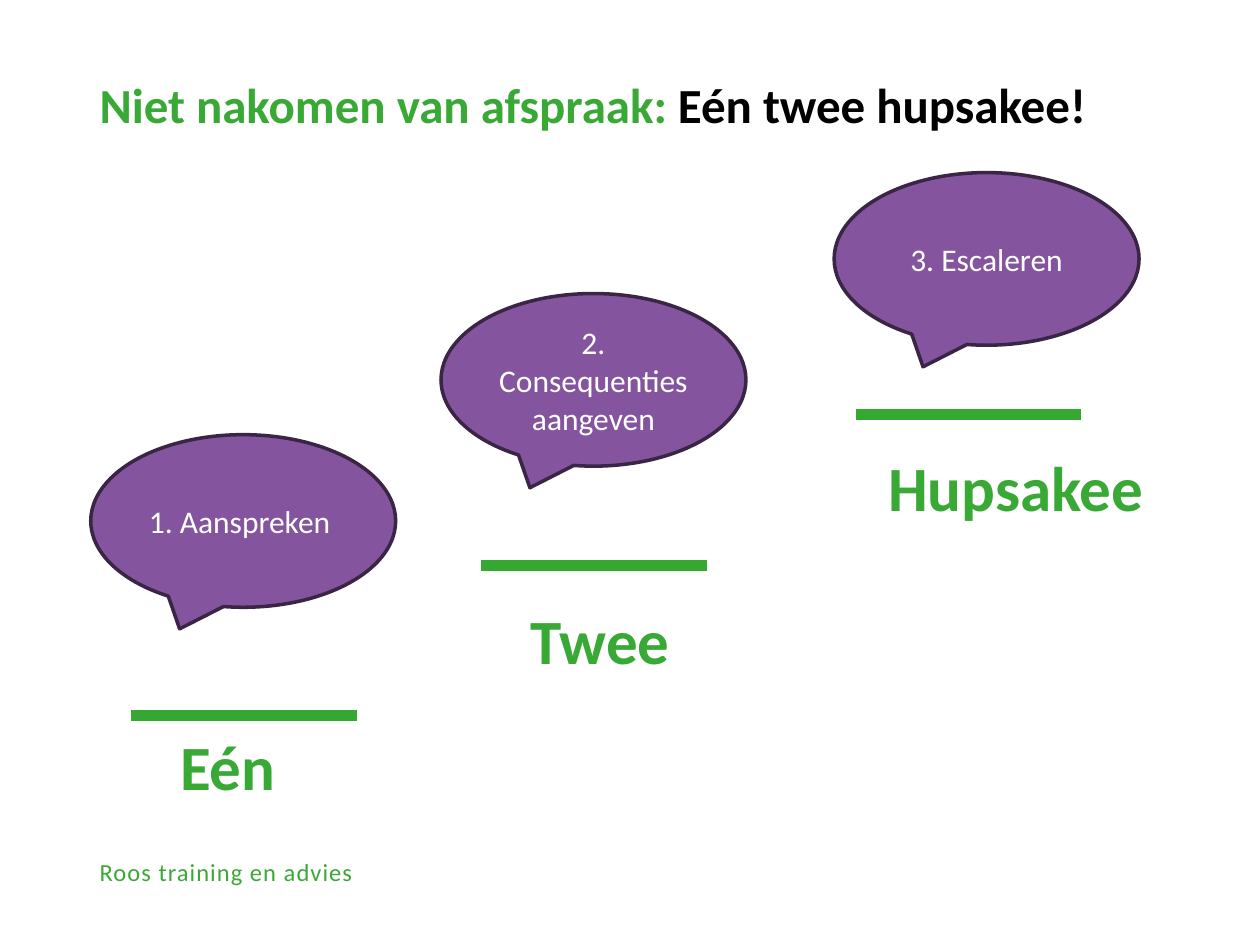
from pptx import Presentation
from pptx.dml.color import RGBColor
from pptx.enum.shapes import MSO_CONNECTOR as Connector, MSO_SHAPE as Shape
from pptx.enum.text import MSO_ANCHOR as Anchor, MSO_AUTO_SIZE as AutoSize, PP_ALIGN as Align
from pptx.oxml.ns import qn
from pptx.util import Inches, Pt
from lxml.etree import SubElement

GREEN = RGBColor(0x39, 0xA9, 0x35)
STEP_GREEN = RGBColor(0x35, 0xA8, 0x31)
PURPLE = RGBColor(0x84, 0x55, 0x9E)
DARK_PURPLE = RGBColor(0x3A, 0x25, 0x45)
BLACK = RGBColor(0, 0, 0)
WHITE = RGBColor(0xFF, 0xFF, 0xFF)

NO_MARGINS = dict.fromkeys(("margin_left", "margin_top", "margin_right", "margin_bottom"), 0)
STEP_LENGTH = 1.79
BUBBLE_SIZE = (2.42, 1.37)
LABEL_SIZE = (2.23, 0.65)

STEPS = [
    ("1. Aanspreken ", (0.72, 3.45), (1.04, 5.68), "Eén", (1.43, 5.77)),
    ("2. Consequenties aangeven", (3.5, 2.33), (3.82, 4.49), "Twee", (4.21, 4.77)),
    ("3. Escaleren", (6.62, 1.37), (6.79, 3.29), "Hupsakee", (7.05, 3.56)),
]


def apply_format(target, values):
    """Set each named attribute of the target."""
    for name, value in values.items():
        setattr(target, name, value)


def add_run(paragraph, text, size, color, bold=False):
    """Append a formatted run to the paragraph and return it."""
    run = paragraph.add_run()
    run.text = text
    apply_format(run.font, {"name": "Calibri", "size": Pt(size), "bold": bold})
    run.font.color.rgb = color
    return run


def set_title(slide):
    """Place and fill the two-coloured title."""
    title = slide.shapes.title
    apply_format(title, {"left": Inches(0.79), "top": Inches(0.2),
                         "width": Inches(8.43), "height": Inches(0.98)})
    apply_format(title.text_frame, NO_MARGINS | {
        "margin_bottom": Inches(0.12), "vertical_anchor": Anchor.BOTTOM,
        "word_wrap": True, "auto_size": AutoSize.NONE})
    paragraph = title.text_frame.paragraphs[0]
    apply_format(paragraph, {"alignment": Align.LEFT, "line_spacing": 1.09})
    add_run(paragraph, "Niet nakomen van afspraak: ", 28, GREEN, True)
    add_run(paragraph, "Eén twee hupsakee!", 28, BLACK, True)


def add_label(shapes, text, box, size, bold=False):
    """Add green text without margins and return its run."""
    label = shapes.add_textbox(*map(Inches, box))
    apply_format(label.text_frame, NO_MARGINS | {"word_wrap": False})
    return add_run(label.text_frame.paragraphs[0], text, size, GREEN, bold)


def add_step_line(shapes, left, top):
    """Add one horizontal stair step."""
    line = shapes.add_connector(Connector.STRAIGHT, Inches(left), Inches(top),
                                Inches(left + STEP_LENGTH), Inches(top))
    line.line.color.rgb = STEP_GREEN
    line.line.width = Pt(6)
    SubElement(line._element.spPr, qn("a:effectLst"))


def add_bubble(shapes, text, position):
    """Add a purple speech bubble."""
    bubble = shapes.add_shape(Shape.OVAL_CALLOUT, *map(Inches, position + BUBBLE_SIZE))
    bubble.shadow.inherit = False
    bubble.fill.solid()
    bubble.fill.fore_color.rgb = PURPLE
    bubble.line.color.rgb = DARK_PURPLE
    bubble.line.width = Pt(2)
    apply_format(bubble.text_frame, {"word_wrap": True, "vertical_anchor": Anchor.MIDDLE})
    paragraph = bubble.text_frame.paragraphs[0]
    paragraph.alignment = Align.CENTER
    add_run(paragraph, text, 18, WHITE)


def add_step(slide, speech, bubble_position, line_position, label, label_position):
    """Add a grouped step with its line, bubble and label."""
    shapes = slide.shapes.add_group_shape().shapes
    add_step_line(shapes, *line_position)
    add_bubble(shapes, speech, bubble_position)
    add_label(shapes, label, label_position + LABEL_SIZE, 36, True)


def main():
    """Build and save the slide."""
    presentation = Presentation()
    apply_format(presentation, {"slide_width": Inches(10), "slide_height": Inches(7.5)})
    slide = presentation.slides.add_slide(presentation.slide_layouts[5])
    footer = add_label(slide.shapes, "Roos training en advies", (0.79, 6.8, 2.09, 0.2), 14)
    footer.font._element.set("spc", "60")
    set_title(slide)
    for step in STEPS:
        add_step(slide, *step)
    presentation.save("out.pptx")


if __name__ == "__main__":
    main()
